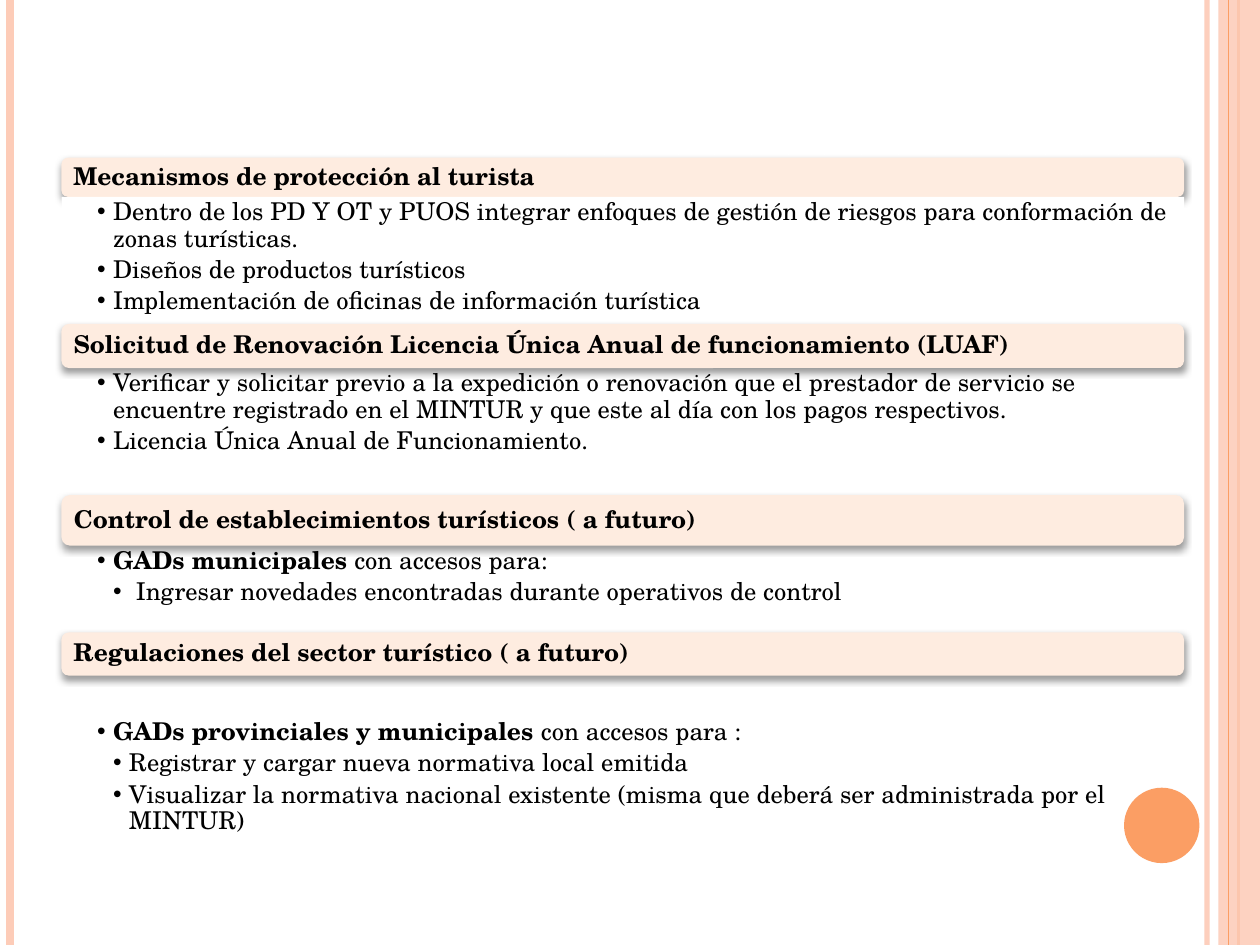
import pptx
import pptx.util
import pptx.dml.color
import pptx.enum.shapes
import pptx.enum.text
import pptx.oxml
import pptx.oxml.ns

Cm = pptx.util.Cm
Pt = pptx.util.Pt
Kind = pptx.enum.shapes.MSO_SHAPE
Anchor = pptx.enum.text.MSO_ANCHOR

FACE = "TeX Gyre Schola"
PEACH, CORAL, CREAM = "FDCCB8", "FB9E64", "FEECE0"
LEFT, WIDTH, DEPTH = 1.24, 22.63, 2.57
TALL = 19.05

RULES = [
    (24.33, PEACH, 3, 93),
    (0.2, PEACH, 4.5, 100),
    (24.97, CORAL, 1.5, 100),
]
PARTS = [
    (3.18, 0.79, 3.97, "Mecanismos de protección al turista", [
        (1, "", "Dentro de los PD Y OT y PUOS integrar enfoques de gestión de riesgos para conformación de zonas turísticas."),
        (1, "", "Diseños de productos turísticos"),
        (1, "", "Implementación de oficinas de información turística"),
    ]),
    (6.53, 0.89, 7.42, "Solicitud de Renovación Licencia Única Anual de funcionamiento (LUAF)", [
        (1, "", "Verificar y solicitar previo a la expedición o renovación que el prestador de servicio se encuentre registrado en el MINTUR y que este al día con los pagos respectivos."),
        (1, "", "Licencia Única Anual de Funcionamiento."),
    ]),
    (9.98, 1.02, 11, "Control de establecimientos turísticos ( a futuro)", [
        (1, "GADs municipales", " con accesos para:"),
        (2, "", " Ingresar novedades encontradas durante operativos de control"),
    ]),
    (12.75, 0.87, 14.45, "Regulaciones del sector turístico ( a futuro)", [
        (1, "GADs provinciales y municipales ", "con accesos para :"),
        (2, "", "Registrar y cargar nueva normativa local emitida"),
        (2, "", "Visualizar la normativa nacional existente (misma que deberá ser administrada por el MINTUR)"),
    ]),
]


def paint(form, tint, alpha=100):
    form.solid()
    form.fore_color.rgb = pptx.dml.color.RGBColor.from_string(tint)
    if alpha < 100:
        node = form._xPr.find(".//" + pptx.oxml.ns.qn("a:srgbClr"))
        add_xml(node, f'<a:alpha {{ns}} val="{alpha * 1000}"/>')


def add_xml(node, text):
    space = pptx.oxml.ns.nsdecls("a")
    node.append(pptx.oxml.parse_xml(text.format(ns=space)))


def add_rule(slide, left, tint, width, alpha):
    kind = pptx.enum.shapes.MSO_CONNECTOR.STRAIGHT
    rule = slide.shapes.add_connector(kind, Cm(left), 0, Cm(left), Cm(TALL))
    rule.line.width = Pt(width)
    paint(rule.line.fill, tint, alpha)
    add_xml(rule._element.spPr, "<a:effectLst {ns}/>")


def add_form(slide, kind, left, top, width, height, tint, alpha=100):
    form = slide.shapes.add_shape(kind, Cm(left), Cm(top), Cm(width), Cm(height))
    form.shadow.inherit = False
    form.line.fill.background()
    paint(form.fill, tint, alpha)
    return form


def set_frame(frame, anchor, left, top, right):
    frame.word_wrap = True
    frame.auto_size = pptx.enum.text.MSO_AUTO_SIZE.NONE
    frame.vertical_anchor = anchor
    frame.margin_left, frame.margin_right = Cm(left), Cm(right)
    frame.margin_top = frame.margin_bottom = Cm(top)


def set_text(para, bold, gap):
    para.alignment = pptx.enum.text.PP_ALIGN.LEFT
    para.line_spacing = 0.9
    para.space_before, para.space_after = Pt(0), Pt(gap)
    font = para.font
    font.name, font.size, font.bold = FACE, Pt(14), bold
    paint(font.fill, "000000")


def add_head(slide, top, height, text):
    head = add_form(slide, Kind.ROUNDED_RECTANGLE, LEFT, top, WIDTH, height, CREAM)
    shade = head._element.spPr.find(pptx.oxml.ns.qn("a:effectLst"))
    add_xml(shade, f'<a:outerShdw {{ns}} blurRad="{Pt(4)}" dist="{Pt(2)}" dir="5400000" '
                   'rotWithShape="0"><a:srgbClr val="000000"><a:alpha val="40000"/>'
                   '</a:srgbClr></a:outerShdw>')
    set_frame(head.text_frame, Anchor.MIDDLE, 0.2, 0.1, 0.2)
    para = head.text_frame.paragraphs[0]
    para.text = text
    set_text(para, True, 0)


def add_point(para, level, lead, text):
    para.level = level
    props = para._p.get_or_add_pPr()
    props.set("marL", str(Cm(0.32 * level)))
    props.set("indent", str(Cm(-0.32)))
    add_xml(props, '<a:buFont {ns} typeface="Arial"/>')
    add_xml(props, '<a:buChar {ns} char="•"/>')
    if lead:
        run = para.add_run()
        run.text = lead
        run.font.bold = True
    para.add_run().text = text
    set_text(para, False, 2.8)


def fill_list(slide, body, top, points):
    body.left, body.top = Cm(LEFT), Cm(top)
    body.width, body.height = Cm(WIDTH), Cm(DEPTH)
    slide.shapes._spTree.append(body._element)
    frame = body.text_frame
    set_frame(frame, Anchor.TOP, 0.72, 0.05, 0.28)
    for rank, point in enumerate(points):
        para = frame.add_paragraph() if rank else frame.paragraphs[0]
        add_point(para, *point)


def main():
    deck = pptx.Presentation()
    deck.slide_width, deck.slide_height = Cm(25.4), Cm(TALL)
    slide = deck.slides.add_slide(deck.slide_layouts[4])
    title, *lists = list(slide.placeholders)
    title._element.getparent().remove(title._element)

    for rule in RULES:
        add_rule(slide, *rule)
    add_form(slide, Kind.RECTANGLE, 24.56, 0, 0.84, TALL, PEACH, 87)
    add_rule(slide, 24.77, CORAL, 0.75, 100)
    add_form(slide, Kind.OVAL, 22.66, 15.88, 1.52, 1.52, CORAL)

    for body, (top, height, below, text, points) in zip(lists, PARTS):
        add_head(slide, top, height, text)
        fill_list(slide, body, below, points)
    paint(lists[0].fill, "FFFFFF")
    deck.save("out.pptx")


if __name__ == "__main__":
    main()
